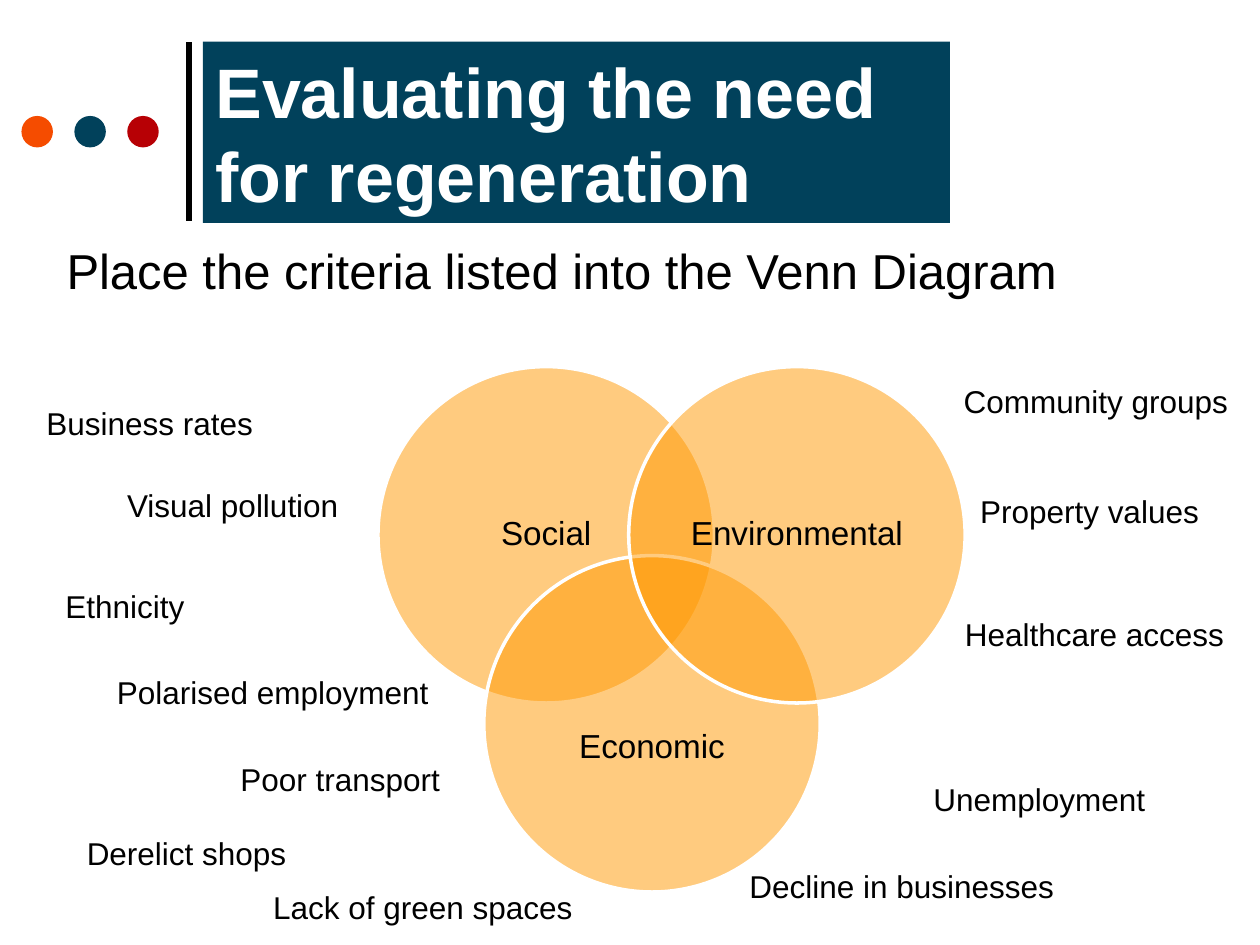
"""Build the slide on evaluating the need for regeneration with a Venn diagram."""
from dataclasses import dataclass

from lxml.etree import SubElement
from pptx import Presentation
from pptx.dml.color import RGBColor
from pptx.enum.shapes import MSO_CONNECTOR as Connector, MSO_SHAPE as Shape
from pptx.enum.text import MSO_ANCHOR as Anchor, MSO_AUTO_SIZE as AutoSize, PP_ALIGN as Align
from pptx.oxml.ns import qn
from pptx.util import Inches, Pt


@dataclass(frozen=True)
class Theme:
    font: str = "Arial"
    ink: str = "000000"
    paper: str = "FFFFFF"
    navy: str = "01415B"
    orange: str = "F54C00"
    red: str = "B70005"
    venn: str = "FF9900"
    title_size: int = 40
    prompt_size: int = 28
    circle_size: int = 19
    criterion_size: int = 18


THEME = Theme()

TITLE = "Evaluating the need for regeneration"
PROMPT = "Place the criteria listed into the Venn Diagram"
DOT_COLOURS = [THEME.orange, THEME.navy, THEME.red]

CIRCLES = [
    ("Social", 3, 2.91, 0),
    ("Economic", 3.84, 4.41, 0.19),
    ("Environmental", 4.99, 2.91, 0),
]
CIRCLE_SIZE, LABEL_SIZE = 2.67, 1.89

CRITERIA = [
    ("Ethnicity", 0.42, 4.61, 2.05),
    ("Derelict shops", 0.59, 6.57, 2.05),
    ("Polarised employment", 0.83, 5.29, 2.84),
    ("Unemployment", 7.31, 6.14, 2.05),
    ("Healthcare access", 7.56, 4.83, 2.32),
    ("Community groups", 7.55, 2.98, 2.32),
    ("Business rates", 0.27, 3.16, 2.32),
    ("Property values", 7.68, 3.86, 2.32),
    ("Visual pollution", 0.91, 3.81, 2.32),
    ("Decline in businesses", 5.85, 6.83, 2.84),
    ("Poor transport", 1.81, 5.98, 2.84),
    ("Lack of green spaces", 2.07, 7, 2.84),
]


def rgb(colour):
    return RGBColor.from_string(colour)


def write(frame, text, size, colour=THEME.ink, bold=False, align=Align.LEFT):
    frame.word_wrap = True
    paragraph = frame.paragraphs[0]
    paragraph.alignment = align
    run = paragraph.add_run()
    run.text = text
    run.font.name = THEME.font
    run.font.size = Pt(size)
    run.font.bold = bold
    run.font.color.rgb = rgb(colour)
    return paragraph


def add_text(slide, text, left, top, width, height, size, align=Align.LEFT):
    box = slide.shapes.add_textbox(*map(Inches, (left, top, width, height)))
    write(box.text_frame, text, size, align=align)
    return box.text_frame


def add_ellipse(slide, left, top, size, colour):
    ellipse = slide.shapes.add_shape(Shape.OVAL, *map(Inches, (left, top, size, size)))
    ellipse.shadow.inherit = False
    ellipse.fill.solid()
    ellipse.fill.fore_color.rgb = rgb(colour)
    ellipse.line.fill.background()
    return ellipse


def add_title_band(slide):
    rule = slide.shapes.add_connector(Connector.STRAIGHT, *map(Inches, (1.5, 1.75, 1.5, 0.33)))
    rule.line.color.rgb = rgb(THEME.ink)
    rule.line.width = Pt(3)
    SubElement(rule._element.spPr, qn("a:effectLst"))

    for index, colour in enumerate(DOT_COLOURS):
        add_ellipse(slide, 0.17 + 0.42 * index, 0.92, 0.25, colour)

    title = slide.shapes.title
    title.left, title.top, title.width, title.height = map(Inches, (1.61, 0.33, 5.93, 1.44))
    title.fill.solid()
    title.fill.fore_color.rgb = rgb(THEME.navy)
    title.text_frame.auto_size = AutoSize.NONE
    title.text_frame.vertical_anchor = Anchor.MIDDLE
    write(title.text_frame, TITLE, THEME.title_size, THEME.paper, bold=True)


def add_venn(slide):
    inset = (CIRCLE_SIZE - LABEL_SIZE) / 2
    for label, left, top, drop in CIRCLES:
        circle = add_ellipse(slide, left, top, CIRCLE_SIZE, THEME.venn)
        circle.line.color.rgb = rgb(THEME.paper)
        circle.line.width = Pt(2)
        fill_colour = circle._element.spPr.find(qn("a:solidFill"))[0]
        SubElement(fill_colour, qn("a:alpha"), val="50000")

        frame = add_text(slide, label, left + inset, top + inset + drop,
                         LABEL_SIZE, LABEL_SIZE, THEME.circle_size, Align.CENTER)
        frame.vertical_anchor = Anchor.MIDDLE
        frame.margin_left = frame.margin_right = Inches(0.08)
        frame.margin_top = frame.margin_bottom = Inches(0.08)
        frame.paragraphs[0].line_spacing = 0.9


def main():
    deck = Presentation()
    deck.slide_width, deck.slide_height = Inches(10), Inches(7.5)
    slide = deck.slides.add_slide(deck.slide_layouts.get_by_name("Title Only"))
    slide.background.fill.solid()
    slide.background.fill.fore_color.rgb = rgb(THEME.paper)

    add_title_band(slide)
    add_venn(slide)
    add_text(slide, PROMPT, 0.43, 1.86, 9.13, 0.57, THEME.prompt_size)
    for criterion, left, top, width in CRITERIA:
        add_text(slide, criterion, left, top, width, 0.4, THEME.criterion_size)

    deck.save("out.pptx")


if __name__ == "__main__":
    main()
